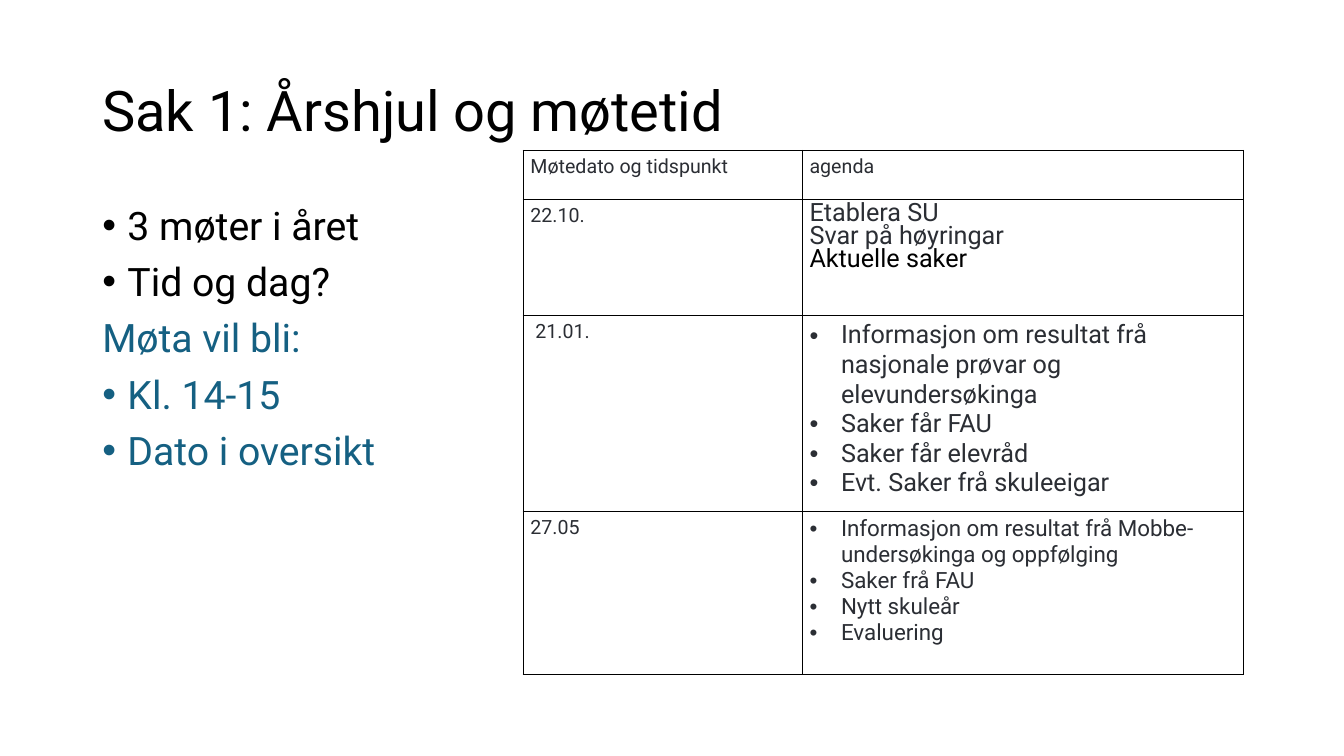
from lxml import etree
from pptx import Presentation
from pptx.dml.color import RGBColor
from pptx.enum.text import MSO_ANCHOR
from pptx.oxml.ns import qn
from pptx.util import Pt

MIDDLE = MSO_ANCHOR.MIDDLE
TOP = MSO_ANCHOR.TOP
BLACK = RGBColor(0x00, 0x00, 0x00)
BLUE = RGBColor(0x15, 0x60, 0x82)
GREY = RGBColor(0x2B, 0x2E, 0x34)
FONT = "Roboto"
EXACT = Pt(16.5)

WIDTHS = (199.4, 315.4)
HEIGHTS = (35.3, 82.8, 139.7, 116.6)
DATES = (
    ("Møtedato og tidspunkt", 0),
    ("22.10.", 0),
    ("21.01.", 3.5),
    ("27.05", 0),
)
PLANS = (
    (14, False, (("agenda", GREY),)),
    (18, False, (
        ("Etablera SU", GREY),
        ("Svar på høyringar", GREY),
        ("Aktuelle saker", BLACK),
    )),
    (18, True, (
        ("Informasjon om resultat frå nasjonale prøvar og elevundersøkinga", GREY),
        ("Saker får FAU", GREY),
        ("Saker får elevråd", GREY),
        ("Evt. Saker frå skuleeigar", GREY),
    )),
    (16, True, (
        ("Informasjon om resultat frå Mobbe-undersøkinga og oppfølging", GREY),
        ("Saker frå FAU", GREY),
        ("Nytt skuleår", GREY),
        ("Evaluering", GREY),
    )),
)
POINTS = (
    ("3 møter i året", BLACK, 18),
    ("Tid og dag?", BLACK, 18),
    ("Møta vil bli:", BLUE, 0),
    ("Kl. 14-15", BLUE, 18),
    ("Dato i oversikt", BLUE, 18),
)


def add_line(frame, text, size, color, space):
    para = frame.paragraphs[0]
    if para.runs:
        para = frame.add_paragraph()
    para.add_run().text = text
    para.line_spacing = space
    font = para.font
    font.name = FONT
    font.size = Pt(size)
    font.color.rgb = color
    return para


def add_bullet(para, indent):
    props = para._p.get_or_add_pPr()
    props.set("marL", str(Pt(indent)))
    props.set("indent", str(-Pt(indent)))
    face = etree.Element(qn("a:buFont"), typeface="Arial")
    mark = etree.Element(qn("a:buChar"), char="•")
    place = props.find(qn("a:defRPr"))
    place.addprevious(face)
    place.addprevious(mark)


def add_box(slide, left, top, width, height, anchor):
    box = slide.shapes.add_textbox(Pt(left), Pt(top), Pt(width), Pt(height))
    frame = box.text_frame
    frame.word_wrap = True
    frame.vertical_anchor = anchor
    return frame


def add_edges(cell):
    props = cell._tc.get_or_add_tcPr()
    for index, side in enumerate(("lnL", "lnR", "lnT", "lnB")):
        line = etree.Element(qn("a:" + side), w=str(Pt(0.75)))
        fill = etree.SubElement(line, qn("a:solidFill"))
        etree.SubElement(fill, qn("a:srgbClr"), val=str(BLACK))
        props.insert(index, line)


def style_cell(cell):
    cell.margin_left = cell.margin_right = Pt(5.2)
    cell.margin_top = cell.margin_bottom = Pt(3.6)
    cell.fill.background()
    add_edges(cell)


def add_plan(slide):
    shape = slide.shapes.add_table(
        len(HEIGHTS), len(WIDTHS), Pt(373.7), Pt(107.3),
        Pt(sum(WIDTHS)), Pt(sum(HEIGHTS)))
    table = shape.table
    table.first_row = False
    table.horz_banding = False
    for column, width in zip(table.columns, WIDTHS):
        column.width = Pt(width)
    for row, height, date, plan in zip(table.rows, HEIGHTS, DATES, PLANS):
        row.height = Pt(height)
        left, right = row.cells
        style_cell(left)
        style_cell(right)
        text, shift = date
        add_line(left.text_frame, text, 14, GREY, EXACT)
        left.margin_left += Pt(shift)
        size, listed, lines = plan
        for text, color in lines:
            space = 1.0 if listed else EXACT
            para = add_line(right.text_frame, text, size, color, space)
            if listed:
                add_bullet(para, 22.5)


def main():
    deck = Presentation()
    deck.slide_width = Pt(960)
    deck.slide_height = Pt(540)
    slide = deck.slides.add_slide(deck.slide_layouts[6])

    title = add_box(slide, 66, 28.75, 828, 104.4, MIDDLE)
    add_line(title, "Sak 1: Årshjul og møtetid", 40, BLACK, 0.9)

    body = add_box(slide, 66, 143.75, 828, 342.6, TOP)
    for text, color, indent in POINTS:
        para = add_line(body, text, 28, color, 0.9)
        para.space_before = Pt(10)
        if indent:
            add_bullet(para, indent)

    add_plan(slide)
    deck.save("out.pptx")


if __name__ == "__main__":
    main()
